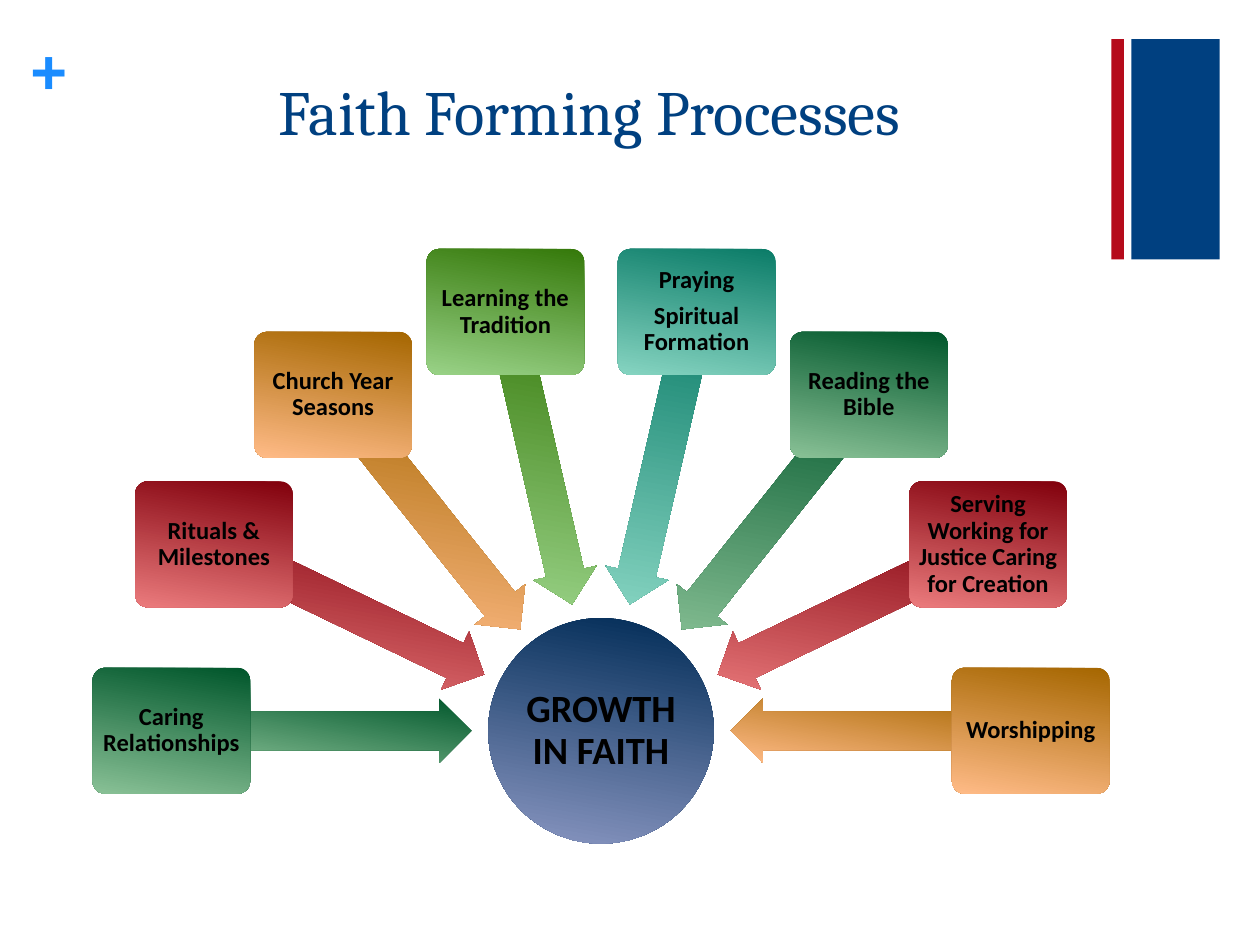
from math import cos, radians, sin

from pptx import Presentation
from pptx.dml.color import RGBColor
from pptx.enum.shapes import MSO_SHAPE as Shape
from pptx.enum.text import MSO_ANCHOR as Anchor, PP_ALIGN as Align
from pptx.oxml.ns import qn
from pptx.util import Inches, Pt

BLACK = RGBColor(0x00, 0x00, 0x00)
NAVY = RGBColor(0x00, 0x40, 0x80)
CRIMSON = RGBColor(0xB5, 0x0B, 0x1B)
SKY = RGBColor(0x1A, 0x8C, 0xFF)
BLUES = RGBColor(0x00, 0x2B, 0x56), RGBColor(0x89, 0x96, 0xC1)
GREENS = RGBColor(0x00, 0x56, 0x2B), RGBColor(0x89, 0xC1, 0x96)
REDS = RGBColor(0x81, 0x00, 0x0C), RGBColor(0xEB, 0x7B, 0x7D)
ORANGES = RGBColor(0xA5, 0x66, 0x00), RGBColor(0xFF, 0xBB, 0x87)
LIMES = RGBColor(0x35, 0x79, 0x0A), RGBColor(0x99, 0xD2, 0x87)
TEALS = RGBColor(0x0B, 0x7C, 0x68), RGBColor(0x86, 0xD4, 0xC1)

HUB_X, HUB_Y, HUB_SIZE = 4.77, 5.8, 1.79
BOX_RADIUS, BOX_W, BOX_H = 3.41, 1.25, 1
ARROW_RADIUS, ARROW_W, ARROW_H = 2.22, 2.38, 0.51

processes = [
    ("Caring Relationships", GREENS),
    ("Rituals & Milestones", REDS),
    ("Church Year Seasons", ORANGES),
    ("Learning the Tradition", LIMES),
    ("Praying\nSpiritual Formation", TEALS),
    ("Reading the Bible", GREENS),
    ("Serving Working for Justice Caring for Creation", REDS),
    ("Worshipping", ORANGES),
]

prs = Presentation()
prs.slide_width, prs.slide_height = Inches(10), Inches(7.5)
slide = prs.slides.add_slide(prs.slide_layouts[6])


def add_gradient_shape(kind, center_x, center_y, width, height, colors):
    shape = slide.shapes.add_shape(
        kind, Inches(center_x - width / 2), Inches(center_y - height / 2), Inches(width), Inches(height)
    )
    shape.shadow.inherit = False
    shape.line.fill.background()
    shape.fill.gradient()
    shape.fill.gradient_angle = 260
    for stop, color, position in zip(shape.fill.gradient_stops, colors, (0, 1)):
        stop.color.rgb = color
        stop.position = position
    shape._element.spPr.find(qn("a:gradFill")).set("rotWithShape", "0")
    return shape


def write_label(shape, text, size, inset):
    frame = shape.text_frame
    frame.word_wrap = True
    frame.vertical_anchor = Anchor.MIDDLE
    frame.margin_left = frame.margin_right = frame.margin_top = frame.margin_bottom = Inches(inset)
    frame.text = text
    for paragraph in frame.paragraphs:
        paragraph.alignment = Align.CENTER
        paragraph.line_spacing = 0.9
        paragraph.space_after = Pt(round(size * 0.35))
        paragraph.font.name = "Calibri"
        paragraph.font.size = Pt(size)
        paragraph.font.bold = True
        paragraph.font.color.rgb = BLACK


for left, width, color in [(8.98, 0.7, NAVY), (8.82, 0.1, CRIMSON)]:
    bar = slide.shapes.add_shape(Shape.RECTANGLE, Inches(left), Inches(0.31), Inches(width), Inches(1.75))
    bar.shadow.inherit = False
    bar.fill.solid()
    bar.fill.fore_color.rgb = color
    bar.line.fill.background()

headings = [
    ("+", (0.24, 0.25, 0.29, 0.61), (0, 0), "Arial", SKY, True, Align.LEFT),
    ("Faith Forming Processes", (0.55, 0.53, 8.26, 1.22), (0.1, 0.05), "Cambria", NAVY, False, Align.CENTER),
]
for text, bounds, (inset_x, inset_y), font_name, color, bold, alignment in headings:
    frame = slide.shapes.add_textbox(*map(Inches, bounds)).text_frame
    frame.word_wrap = True
    frame.margin_left = frame.margin_right = Inches(inset_x)
    frame.margin_top = frame.margin_bottom = Inches(inset_y)
    frame.text = text
    heading = frame.paragraphs[0]
    heading.alignment = alignment
    heading.font.name = font_name
    heading.font.size = Pt(36)
    heading.font.bold = bold
    heading.font.color.rgb = color

hub = add_gradient_shape(Shape.OVAL, HUB_X, HUB_Y, HUB_SIZE, HUB_SIZE, BLUES)
write_label(hub, "GROWTH IN FAITH", 22, 0.02)

for index, (text, colors) in enumerate(processes):
    angle = 180 + index * 180 / (len(processes) - 1)
    dx, dy = cos(radians(angle)), sin(radians(angle))

    arrow = add_gradient_shape(
        Shape.LEFT_ARROW, HUB_X + ARROW_RADIUS * dx, HUB_Y + ARROW_RADIUS * dy, ARROW_W, ARROW_H, colors
    )
    arrow.adjustments[0] = 0.6
    arrow.adjustments[1] = 0.5
    arrow.rotation = angle % 360

    box = add_gradient_shape(
        Shape.ROUNDED_RECTANGLE, HUB_X + BOX_RADIUS * dx, HUB_Y + BOX_RADIUS * dy, BOX_W, BOX_H, colors
    )
    box.adjustments[0] = 0.1
    write_label(box, text, 14, 0.03)

prs.save("out.pptx")
